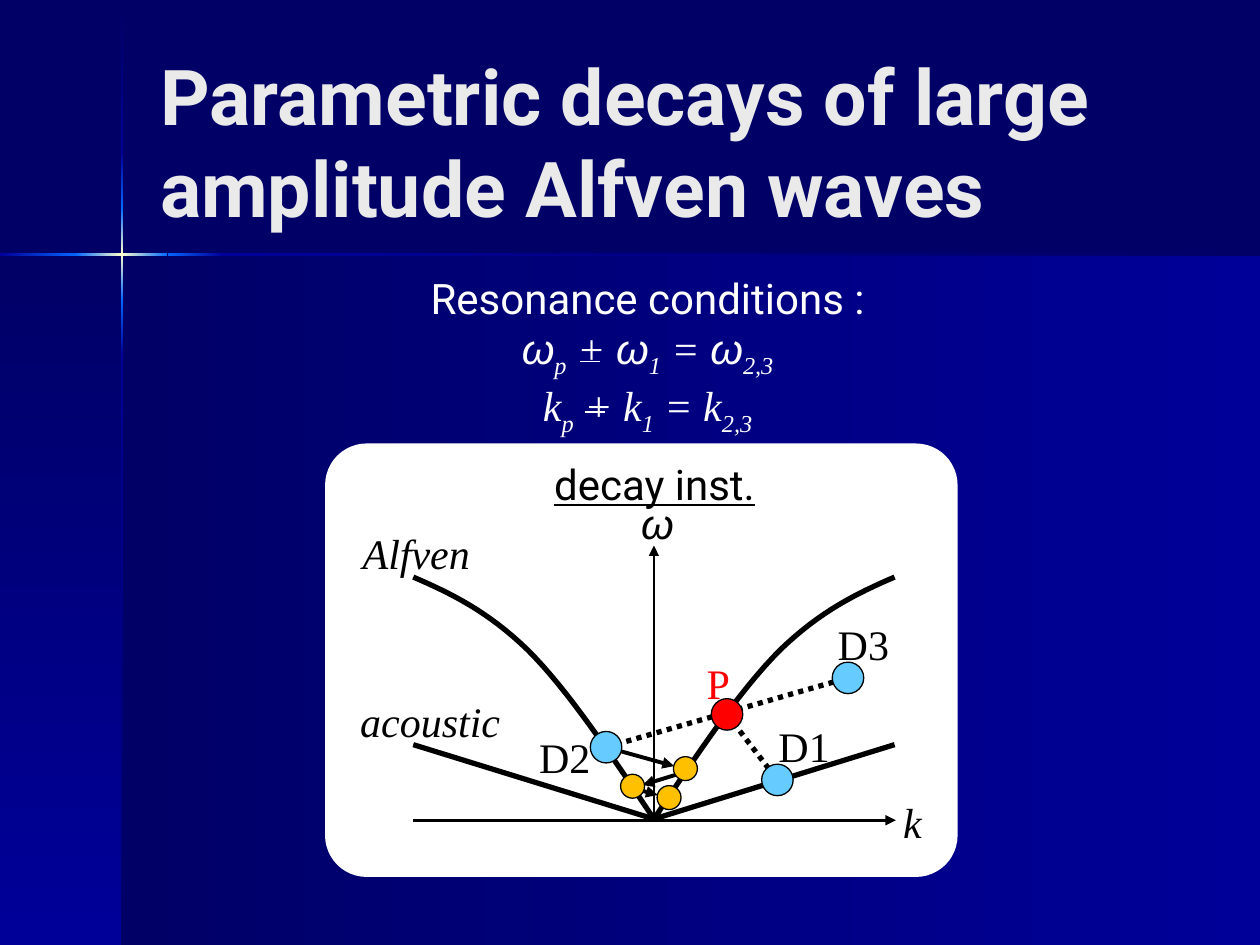
from dataclasses import dataclass

from lxml.etree import SubElement
from pptx import Presentation
from pptx.dml.color import RGBColor
from pptx.enum.dml import MSO_LINE
from pptx.enum.shapes import MSO_CONNECTOR as CONN, MSO_SHAPE as SHAPE
from pptx.enum.text import MSO_ANCHOR as ANCHOR, MSO_AUTO_SIZE as AUTO, PP_ALIGN as ALIGN
from pptx.oxml.ns import qn
from pptx.util import Inches, Pt


@dataclass(frozen=True)
class Theme:
    navy: str = "000066"
    blue: str = "000099"
    beam: str = "0066FF"
    glow: str = "FFFFCC"
    title: str = "EAEAEA"
    white: str = "FFFFFF"
    ink: str = "000000"
    pump: str = "FF0000"
    daughter: str = "66CCFF"
    cascade: str = "FFC000"
    sans: str = "Roboto"
    serif: str = "Times New Roman"
    greek: str = "Arial"
    title_size: int = 44
    text_size: int = 24


@dataclass(frozen=True)
class Box:
    x: float
    y: float
    w: float
    h: float

    def emu(self):
        return [Inches(v) for v in (self.x, self.y, self.w, self.h)]


T = Theme()


def rgb(color):
    return RGBColor.from_string(color)


def add_run(p, text, font=T.serif, size=T.text_size, color=T.ink, bold=False,
            italic=False, underline=False, sub=False):
    r = p.add_run()
    r.text = text
    f = r.font
    f.name, f.size, f.color.rgb = font, Pt(size), rgb(color)
    f.bold, f.italic, f.underline = bold, italic, underline
    if sub:
        r._r.get_or_add_rPr().set("baseline", "-25000")


def add_label(slide, text, box, **fmt):
    tf = slide.shapes.add_textbox(*box.emu()).text_frame
    tf.word_wrap = False
    add_run(tf.paragraphs[0], text, **fmt)


def add_block(slide, kind, box, fill, line=None):
    sp = slide.shapes.add_shape(kind, *box.emu())
    sp.shadow.inherit = False
    sp.fill.solid()
    sp.fill.fore_color.rgb = rgb(fill)
    if line:
        sp.line.color.rgb, sp.line.width = rgb(line), Pt(0.75)
    else:
        sp.line.fill.background()
    return sp


def add_gradient(slide, box, colors, vertical=False):
    sp = add_block(slide, SHAPE.RECTANGLE, box, colors[0])
    sp.fill.gradient()
    sp.fill.gradient_angle = 270 if vertical else 0
    stops = sp._element.spPr.find(qn("a:gradFill")).find(qn("a:gsLst"))
    stops.clear()
    for i, color in enumerate(colors):
        gs = SubElement(stops, qn("a:gs"), pos=str(100000 * i // (len(colors) - 1)))
        SubElement(gs, qn("a:srgbClr"), val=color)


def add_line(slide, start, end, width, color=T.ink, dotted=False, arrow=False):
    cx = slide.shapes.add_connector(CONN.STRAIGHT, *map(Inches, (*start, *end)))
    cx.line.color.rgb, cx.line.width = rgb(color), Pt(width)
    if dotted:
        cx.line.dash_style = MSO_LINE.ROUND_DOT
    if arrow:
        SubElement(cx.line._get_or_add_ln(), qn("a:tailEnd"), type="triangle")
    SubElement(cx._element.spPr, qn("a:effectLst"))


def bezier(p0, p1, p2, p3, steps=16):
    """Points along a cubic curve, without its first point."""
    for i in range(1, steps + 1):
        t = i / steps
        u = 1 - t
        yield tuple(u**3 * a + 3 * u * u * t * b + 3 * u * t * t * c + t**3 * d
                    for a, b, c, d in zip(p0, p1, p2, p3))


def add_backdrop(slide, box):
    """Gradient panels and the crossing light beams."""
    cross_x, cross_y, thick = box.x + 0.97, box.y + 2.02, 0.02
    right, bottom = box.x + box.w, box.y + box.h
    add_gradient(slide, Box(cross_x, cross_y, right - cross_x, bottom - cross_y),
                 (T.navy, T.blue))
    add_gradient(slide, Box(box.x, cross_y, cross_x - box.x, bottom - cross_y),
                 (T.navy, T.blue), vertical=True)
    rise, shine, fade = (T.blue, T.beam), (T.beam, T.glow, T.beam), (T.beam, T.blue)
    down = [(0.01, 1.21, (T.navy, T.blue)), (1.21, 1.65, rise), (1.65, 2.38, shine),
            (2.38, 2.82, fade), (2.82, box.h, (T.blue, T.navy))]
    across = [(0, 0.61, rise), (0.6, 1.33, shine), (1.33, 1.77, fade),
              (1.77, box.w, (T.blue, T.navy))]
    for a, b, colors in down:
        add_gradient(slide, Box(cross_x - thick / 2, box.y + a, thick, b - a),
                     colors, vertical=True)
    for a, b, colors in across:
        add_gradient(slide, Box(box.x + a, cross_y - thick / 2, b - a, thick), colors)


def add_title(slide, box, text):
    sp = slide.shapes.title
    sp.left, sp.top, sp.width, sp.height = box.emu()
    tf = sp.text_frame
    tf.auto_size, tf.vertical_anchor, tf.word_wrap = AUTO.NONE, ANCHOR.MIDDLE, True
    p = tf.paragraphs[0]
    p.alignment = ALIGN.LEFT
    add_run(p, text, font=T.sans, size=T.title_size, color=T.title, bold=True)


def add_conditions(slide, box):
    """Resonance conditions, with strokes that complete the plus-minus signs."""
    tf = slide.shapes.add_textbox(*box.emu()).text_frame
    tf.word_wrap = True
    p = tf.paragraphs[0]
    p.alignment = ALIGN.CENTER
    add_run(p, "Resonance conditions :", font=T.sans, color=T.white)
    for symbol, font in (("ω", T.greek), ("k", T.serif)):
        p = tf.add_paragraph()
        p.alignment = ALIGN.CENTER
        for sign, index in (("", "p"), (" + ", "1"), (" = ", "2,3")):
            if sign:
                add_run(p, sign, color=T.white, italic=True)
            add_run(p, symbol, font=font, color=T.white, italic=True)
            add_run(p, index, color=T.white, italic=True, sub=True)
    for dx, dy in ((1.35, 0.76), (1.39, 1.16)):
        x, y = box.x + dx, box.y + dy
        add_line(slide, (x, y), (x + 0.16, y), 0.75, T.white)


def add_diagram(slide, box):
    """Dispersion diagram; all positions are measured from the axes' origin."""
    def at(x, y):
        return box.x + 2.61 + x, box.y + 2.98 + y

    def dot(center, size, color):
        x, y = at(*center)
        add_block(slide, SHAPE.OVAL, Box(x - size / 2, y - size / 2, size, size),
                  color, T.ink)

    add_block(slide, SHAPE.ROUNDED_RECTANGLE, box, T.white).adjustments[0] = 0.096

    # Acoustic and Alfven branches, mirrored about the frequency axis
    for side in (1, -1):
        add_line(slide, at(0, 0), at(side * 1.91, -0.59), 3)
        knots = [at(side * x, y) for x, y in (
            (0, 0), (0.34, -0.51), (0.68, -1.02), (1, -1.34),
            (1.32, -1.65), (1.61, -1.79), (1.91, -1.92))]
        points = [*bezier(*knots[:4]), *bezier(*knots[3:])]
        fb = slide.shapes.build_freeform(*map(Inches, knots[0]))
        fb.add_line_segments([(Inches(x), Inches(y)) for x, y in points], close=False)
        curve = fb.convert_to_shape()
        curve.shadow.inherit = False
        curve.fill.background()
        curve.line.color.rgb, curve.line.width = rgb(T.ink), Pt(3)

    # Axes
    add_line(slide, at(-1.91, 0.01), at(1.92, 0.01), 1.5, arrow=True)
    add_line(slide, at(0, 0), at(0, -2.17), 1.5, arrow=True)

    # Pump and daughter waves
    pump, d1, d2, d3 = (0.58, -0.83), (0.98, -0.31), (-0.38, -0.57), (1.54, -1.12)
    add_line(slide, at(*d2), at(*d3), 3, dotted=True)
    add_line(slide, at(*pump), at(*d1), 3, dotted=True)
    for center, color in ((pump, T.pump), (d1, T.daughter), (d3, T.daughter)):
        dot(center, 0.25, color)

    # Labels
    for text, x, y, w, fmt in (
            ("ω", -0.2, -2.6, 0.43, dict(font=T.greek, italic=True)),
            ("k", 1.88, -0.23, 0.35, dict(italic=True)),
            ("Alfven", -2.41, -2.36, 1.06, dict(italic=True)),
            ("acoustic", -2.43, -1.03, 1.32, dict(italic=True)),
            ("P", 0.32, -1.33, 0.36, dict(color=T.pump)),
            ("D1", 0.89, -0.83, 0.61, {}),
            ("D2", -1.01, -0.74, 0.61, {}),
            ("D3", 1.36, -1.64, 0.61, {}),
            ("decay inst.", -0.89, -2.91, 1.8, dict(font=T.sans, underline=True))):
        add_label(slide, text, Box(*at(x, y), w, 0.5), **fmt)

    # Cascade of further decays, last step at the back
    for start, end, center in (
            ((-0.15, -0.24), (0.03, -0.19), (0.12, -0.17)),
            ((0.27, -0.38), (-0.09, -0.27), (-0.17, -0.26)),
            ((-0.38, -0.57), (0.16, -0.42), (0.25, -0.4))):
        add_line(slide, at(*start), at(*end), 2.25, arrow=True)
        dot(center, 0.19, T.cascade)
    dot(d2, 0.25, T.daughter)


def main():
    prs = Presentation()
    prs.slide_width, prs.slide_height = Inches(10), Inches(7.5)
    slide = prs.slides.add_slide(prs.slide_layouts[5])
    slide.background.fill.solid()
    slide.background.fill.fore_color.rgb = rgb(T.navy)
    add_backdrop(slide, Box(0, 0, 10, 7.5))
    add_title(slide, Box(1.17, 0.33, 8.44, 1.57),
              "Parametric decays of large amplitude Alfven waves")
    add_diagram(slide, Box(2.58, 3.52, 5.02, 3.44))
    add_conditions(slide, Box(3.25, 2.11, 3.78, 1.31))
    prs.save("out.pptx")


if __name__ == "__main__":
    main()
